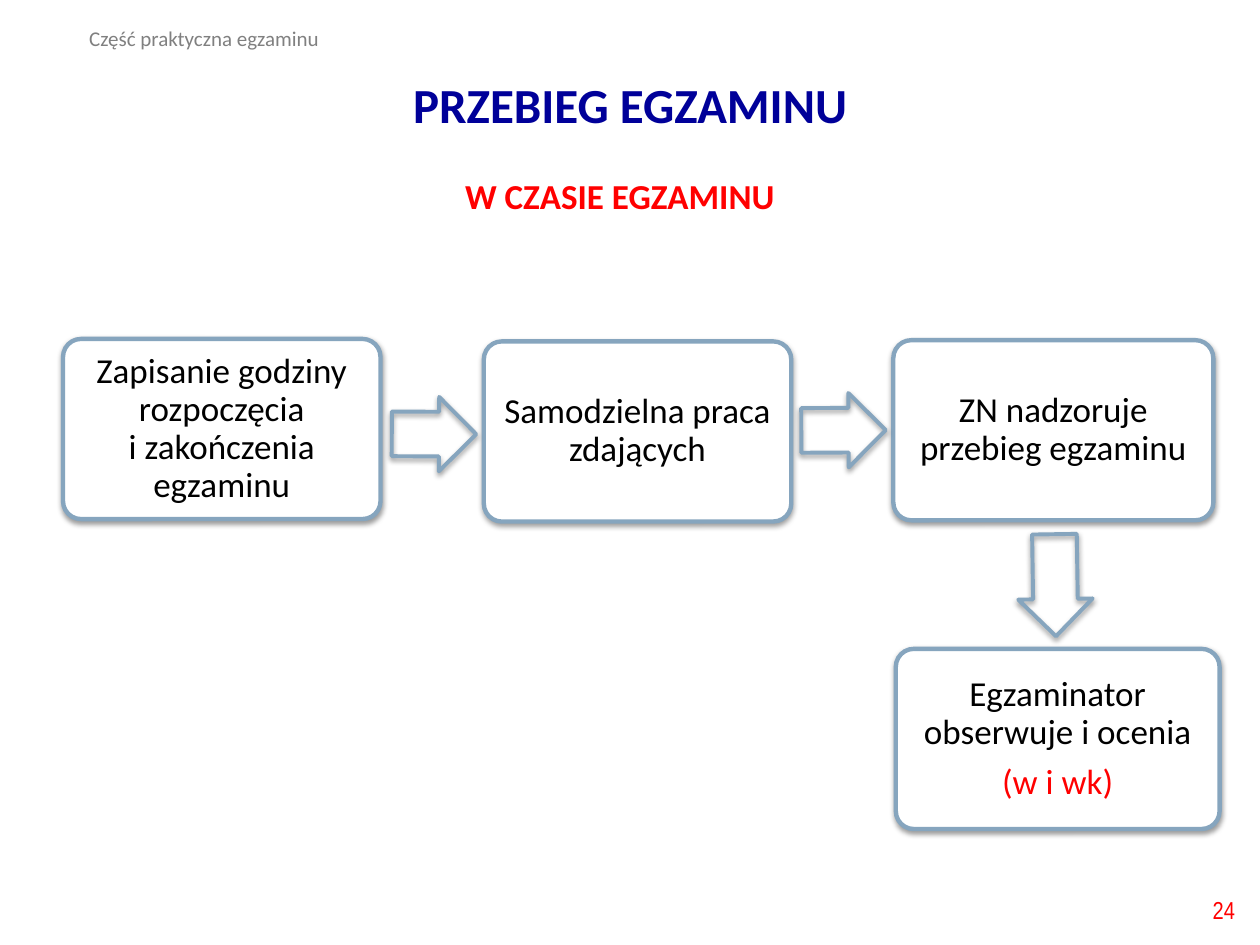
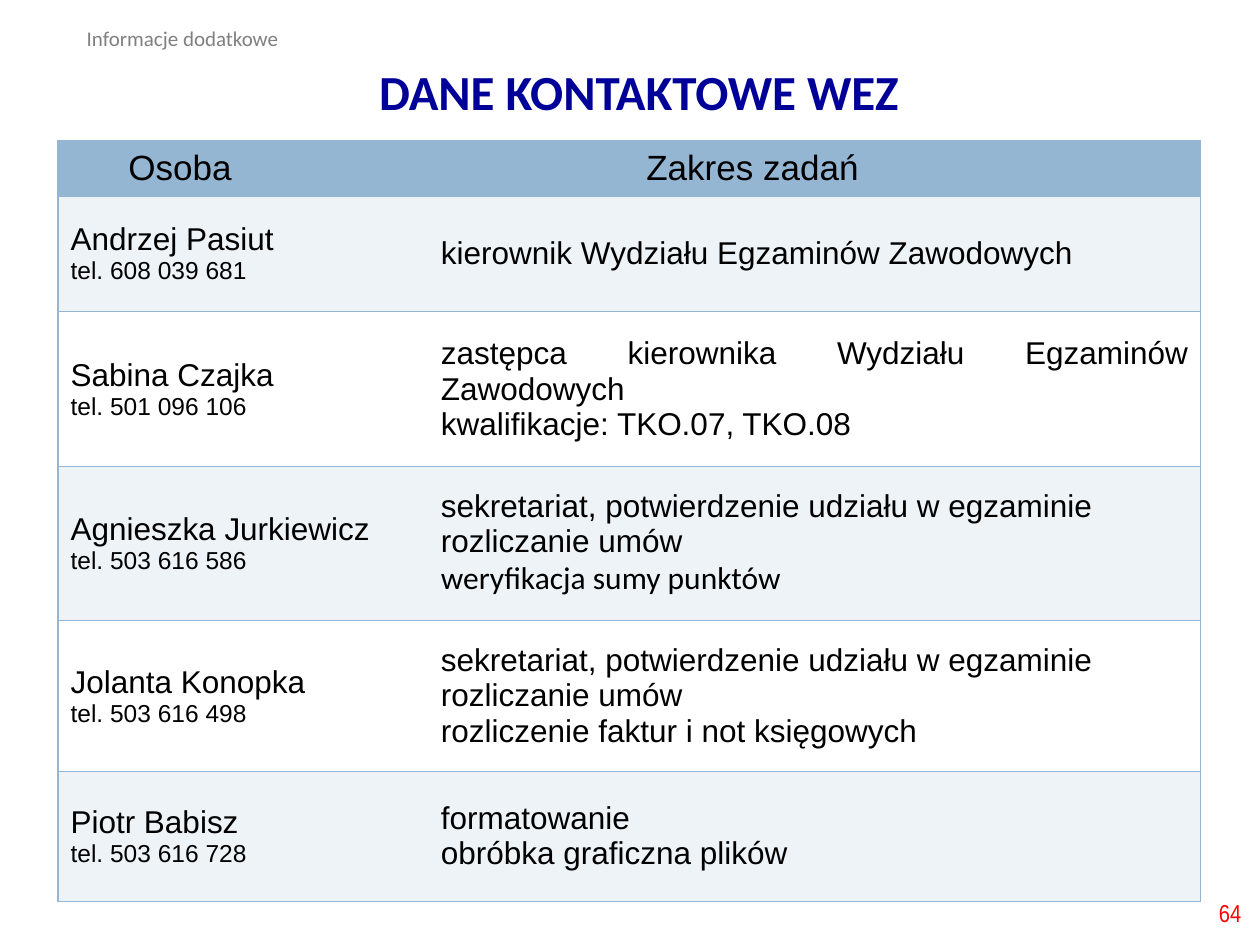
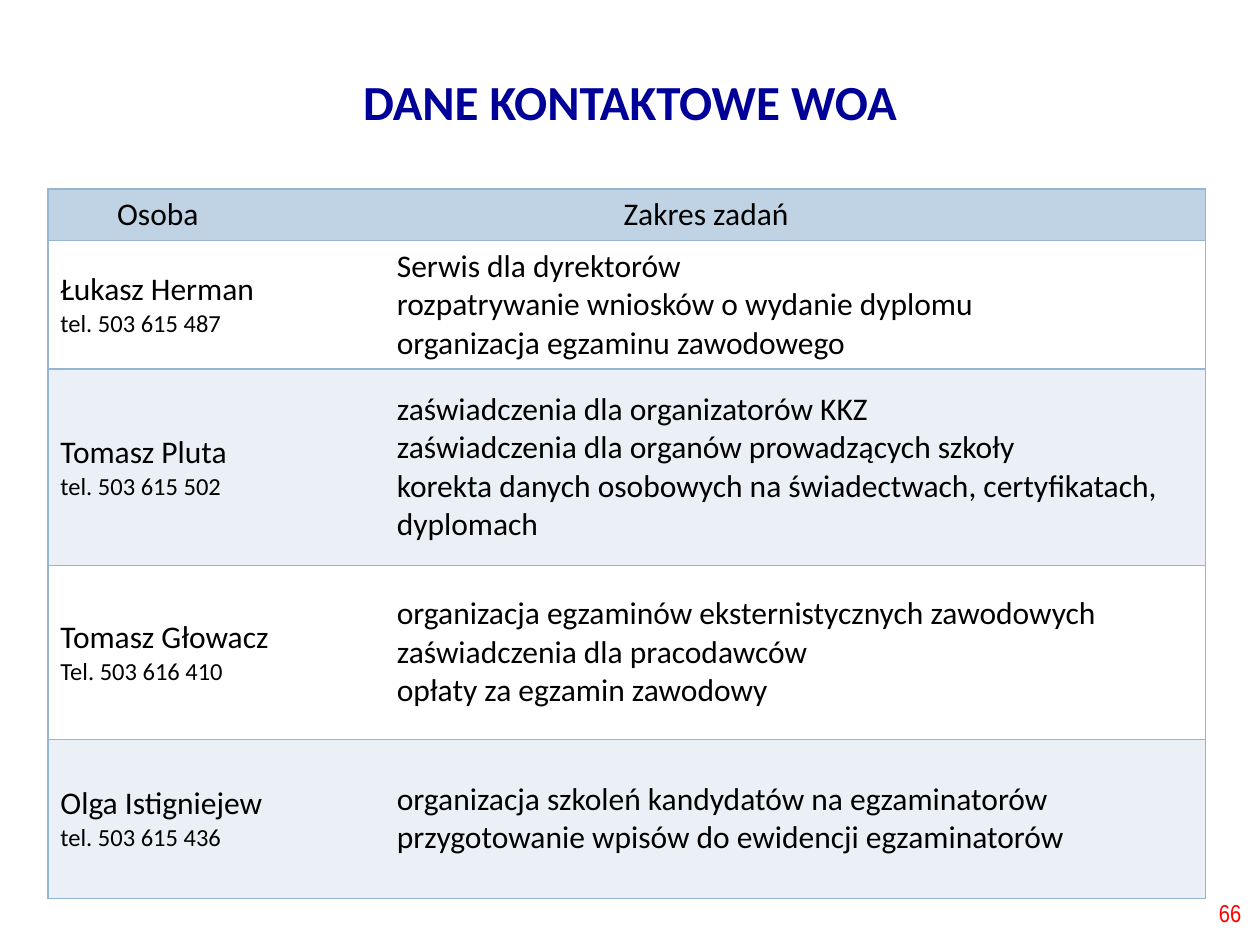
import pptx
import pptx.util
import pptx.dml.color
import pptx.enum.shapes
import pptx.enum.text
import pptx.oxml
import pptx.oxml.ns

Inches = pptx.util.Inches
Pt = pptx.util.Pt
RGB = pptx.dml.color.RGBColor.from_string
ALIGN = pptx.enum.text.PP_ALIGN
MIDDLE = pptx.enum.text.MSO_ANCHOR.MIDDLE
TOP = pptx.enum.text.MSO_ANCHOR.TOP
SHAPE = pptx.enum.shapes.MSO_SHAPE
SPACE = pptx.oxml.ns.nsdecls("a")

COLORS = {
    "title": "000099", "red": "FF0000", "gray": "808080", "black": "000000",
    "white": "FFFFFF", "steel": "86A5BE", "grid": "94B6D2",
    "head": "BFD3E4", "pale": "EEF3F7", "band": "EAF0F6",
}
SHADOW = (
    f'<a:effectLst {SPACE}><a:outerShdw blurRad="40000" dist="20000" dir="5400000" '
    f'rotWithShape="0"><a:srgbClr val="{COLORS["black"]}"><a:alpha val="38000"/>'
    '</a:srgbClr></a:outerShdw></a:effectLst>'
)


def write(frame, lines, size, color, font="Calibri", bold=False, align=ALIGN.LEFT, ratio=None):
    frame.word_wrap = True
    for i, line in enumerate(lines):
        para = frame.paragraphs[0] if i == 0 else frame.add_paragraph()
        para.text = line
        para.alignment = align
        para.line_spacing = ratio
        for run in para.runs:
            run.font.size = Pt(size)
            run.font.name = font
            run.font.bold = bold
            run.font.color.rgb = RGB(COLORS[color])


def label(slide, place, text, size, color, anchor=MIDDLE, **style):
    box = slide.shapes.add_textbox(*map(Inches, place))
    box.text_frame.vertical_anchor = anchor
    write(box.text_frame, [text], size, color, **style)


deck = pptx.Presentation()
deck.slide_width = Inches(10)
deck.slide_height = Inches(7.5)

pages = [
    ("PRZEBIEG EGZAMINU", (0.69, 0.64, 8.62, 0.43), "Część praktyczna egzaminu", 0.61, "24", (7.65, 7.02)),
    ("DANE KONTAKTOWE WEZ", (0.17, 0.5, 9.8, 0.5), "Informacje dodatkowe", 0.59, "64", (7.7, 7.04)),
    ("DANE KONTAKTOWE WOA", (0, 0.58, 10, 0.5), None, 0, "66", (7.7, 7.04)),
]
for title, place, topic, left, number, corner in pages:
    slide = deck.slides.add_slide(deck.slide_layouts[6])
    label(slide, place, title, 28, "title", bold=True, align=ALIGN.CENTER, ratio=0.9)
    label(slide, (*corner, 2.25, 0.4), number, 14, "red", font="Arial Narrow", align=ALIGN.RIGHT)
    if topic:
        label(slide, (left, 0.15, 2.67, 0.3), topic, 12, "gray", anchor=TOP)

flow = deck.slides[0]
label(flow, (0.61, 1.36, 8.62, 0.43), "W CZASIE EGZAMINU", 20, "red",
      bold=True, align=ALIGN.CENTER, ratio=0.9)

steps = [
    (0.5, 2.69, 2.52, ["Zapisanie godziny rozpoczęcia\ni zakończenia egzaminu"]),
    (3.84, 2.71, 2.44, ["Samodzielna praca zdających"]),
    (7.09, 2.7, 2.54, ["ZN nadzoruje przebieg egzaminu"]),
    (7.11, 5.15, 2.57, ["Egzaminator obserwuje i ocenia", "(w i wk)"]),
]
for left, top, width, lines in steps:
    step = flow.shapes.add_shape(SHAPE.ROUNDED_RECTANGLE, *map(Inches, (left, top, width, 1.43)))
    step.adjustments[0] = 0.1
    step.fill.solid()
    step.fill.fore_color.rgb = RGB(COLORS["white"])
    step.line.color.rgb = RGB(COLORS["steel"])
    step.line.width = Pt(2.5)
    step._element.spPr.append(pptx.oxml.parse_xml(SHADOW))
    frame = step.text_frame
    frame.vertical_anchor = MIDDLE
    frame.margin_left = frame.margin_right = Inches(0.12)
    frame.margin_top = frame.margin_bottom = Inches(0.12)
    write(frame, lines, 20, "black", align=ALIGN.CENTER, ratio=0.9)
    for para in frame.paragraphs:
        para.space_after = Pt(7)
frame.paragraphs[1].runs[0].font.color.rgb = RGB(COLORS["red"])

arrows = [
    (SHAPE.RIGHT_ARROW, (3.11, 3.15, 0.67, 0.59), 0.3),
    (SHAPE.RIGHT_ARROW, (6.36, 3.12, 0.67, 0.59), -0.3),
    (SHAPE.DOWN_ARROW, (8.08, 4.24, 0.59, 0.81), -0.9),
]
for kind, place, angle in arrows:
    arrow = flow.shapes.add_shape(kind, *map(Inches, place))
    arrow.adjustments[0] = 0.6
    arrow.adjustments[1] = 0.5
    arrow.rotation = angle
    arrow.fill.background()
    arrow.line.color.rgb = RGB(COLORS["steel"])
    arrow.line.width = Pt(2.25)
    arrow._element.spPr.append(pptx.oxml.parse_xml(SHADOW))

exams = [
    (["Osoba"], ["Zakres zadań"]),
    (["Andrzej Pasiut", "tel. 608 039 681"], ["kierownik Wydziału Egzaminów Zawodowych"]),
    (["Sabina Czajka", "tel. 501 096 106"],
     ["zastępca kierownika Wydziału Egzaminów Zawodowych", "kwalifikacje: TKO.07, TKO.08"]),
    (["Agnieszka Jurkiewicz", "tel. 503 616 586"],
     ["sekretariat, potwierdzenie udziału w egzaminie", "rozliczanie umów", "weryfikacja sumy punktów"]),
    (["Jolanta Konopka", "tel. 503 616 498"],
     ["sekretariat, potwierdzenie udziału w egzaminie", "rozliczanie umów",
      "rozliczenie faktur i not księgowych"]),
    (["Piotr Babisz", "tel. 503 616 728"], ["formatowanie", "obróbka graficzna plików"]),
]
office = [
    (["Osoba"], ["Zakres zadań"]),
    (["Łukasz Herman", "tel. 503 615 487"],
     ["Serwis dla dyrektorów", "rozpatrywanie wniosków o wydanie dyplomu",
      "organizacja egzaminu zawodowego"]),
    (["Tomasz Pluta", "tel. 503 615 502"],
     ["zaświadczenia dla organizatorów KKZ", "zaświadczenia dla organów prowadzących szkoły",
      "korekta danych osobowych na świadectwach, certyfikatach, dyplomach"]),
    (["Tomasz Głowacz", "Tel. 503 616 410"],
     ["organizacja egzaminów eksternistycznych zawodowych", "zaświadczenia dla pracodawców",
      "opłaty za egzamin zawodowy"]),
    (["Olga Istigniejew", "tel. 503 615 436"],
     ["organizacja szkoleń kandydatów na egzaminatorów",
      "przygotowanie wpisów do ewidencji egzaminatorów"]),
]
lists = [
    (deck.slides[1], exams, (0.46, 1.12), (2.94, 6.13), (0.42, 0.92, 1.23, 1.22, 1.2, 1.03),
     "Arial", 20, (0.56, 1.73), ("grid", "pale", "white"), (2, 5)),
    (deck.slides[2], office, (0.38, 1.5), (2.67, 6.52), (0.41, 1.02, 1.56, 1.38, 1.26),
     "Calibri", 18, (0.55, 1.9), ("head", "white", "band"), ()),
]
grids = []
for slide, rows, corner, widths, heights, font, large, indents, fills, justs in lists:
    place = (*corner, sum(widths), sum(heights))
    grid = slide.shapes.add_table(len(rows), 2, *map(Inches, place)).table
    grids.append(grid)
    for col, width in enumerate(widths):
        grid.columns[col].width = Inches(width)
    for row, height in enumerate(heights):
        grid.rows[row].height = Inches(height)
        for col in range(2):
            cell = grid.cell(row, col)
            cell.vertical_anchor = MIDDLE
            if row == 0:
                cell.margin_left = Inches(indents[col])
            align = ALIGN.JUSTIFY if col == 1 and row in justs else ALIGN.LEFT
            write(cell.text_frame, rows[row][col], 18 if row else large, "black",
                  font=font, align=align)
            if row and col == 0:
                cell.text_frame.paragraphs[1].runs[0].font.size = Pt(14)
            inner = "R" if col == 0 else "L"
            for side in "LRTB":
                paint = f'<a:solidFill><a:srgbClr val="{COLORS["grid"]}"/></a:solidFill>'
                if side == inner:
                    paint = "<a:noFill/>"
                edge = f'<a:ln{side} {SPACE} w="12700">{paint}</a:ln{side}>'
                cell._tc.get_or_add_tcPr().append(pptx.oxml.parse_xml(edge))
            cell.fill.solid()
            tone = fills[0] if row == 0 else fills[2 - row % 2]
            cell.fill.fore_color.rgb = RGB(COLORS[tone])

grids[0].cell(3, 1).text_frame.paragraphs[2].runs[0].font.name = "Calibri"

deck.save("out.pptx")
